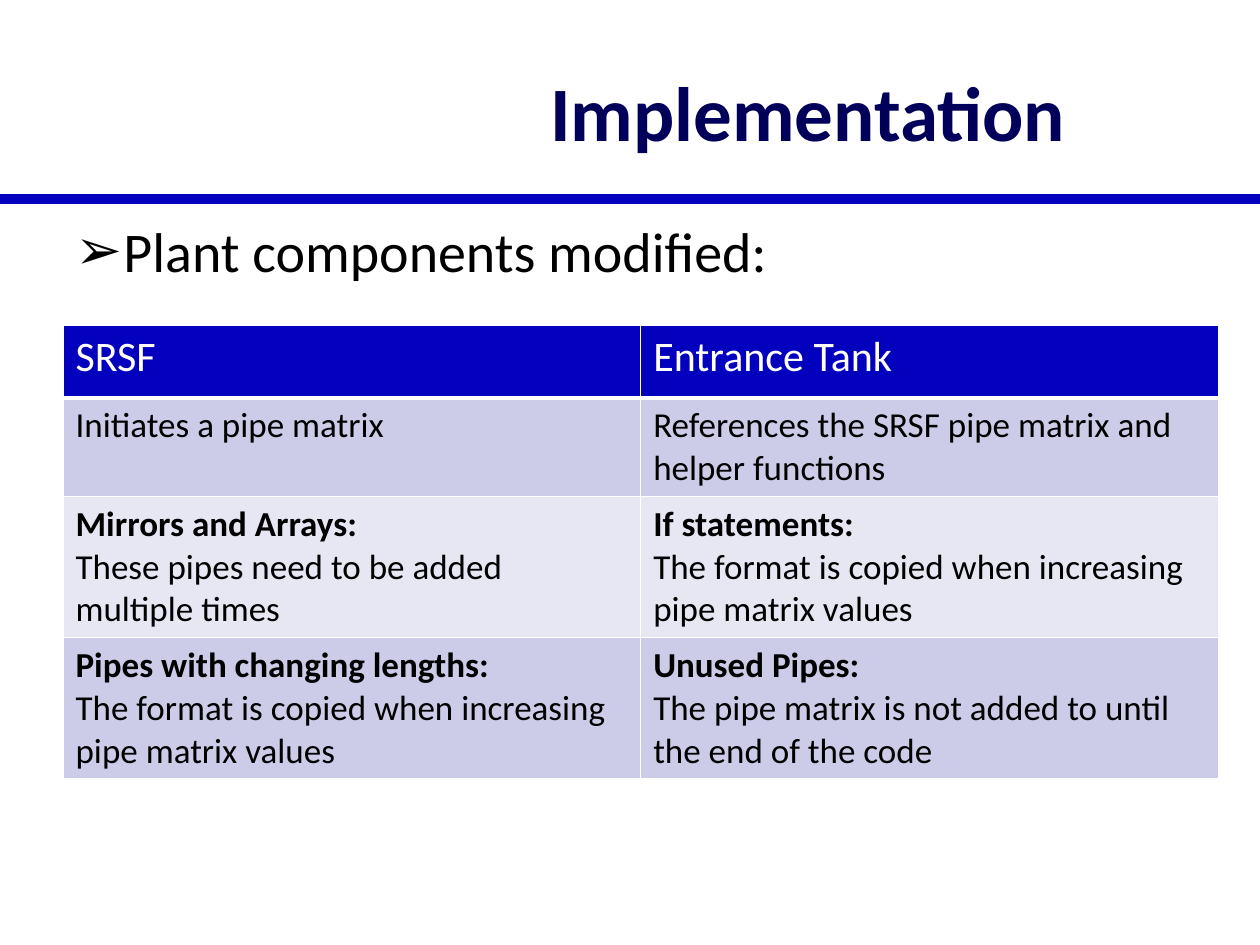
from lxml.etree import SubElement
from pptx import Presentation
from pptx.dml.color import RGBColor
from pptx.enum.shapes import MSO_CONNECTOR as Connector
from pptx.enum.text import MSO_ANCHOR as Anchor, PP_ALIGN as Align
from pptx.oxml.ns import qn
from pptx.util import Inches, Pt

BLUE, NAVY, BLACK, WHITE = "0300BE", "00005A", "000000", "FFFFFF"
BANDS = ["CCCCE8", "E7E7F4"]
HEADINGS = ["SRSF", "Entrance Tank"]
# Each cell is a list of lines; a line before the last is a bold label.
COMPONENTS = [
    [["Initiates a pipe matrix"],
     ["References the SRSF pipe matrix and helper functions"]],
    [["Mirrors and Arrays:", "These pipes need to be added multiple times"],
     ["If statements:", "The format is copied when increasing pipe matrix values"]],
    [["Pipes with changing lengths:", "The format is copied when increasing pipe matrix values"],
     ["Unused Pipes:", "The pipe matrix is not added to until the end of the code"]],
]


def rgb(color):
    return RGBColor.from_string(color)


def set_font(font, color, **values):
    font.color.rgb = rgb(color)
    for name, value in {"name": "Calibri", "bold": False, **values}.items():
        setattr(font, name, value)


def place(shape, left, top, width, height):
    box = {"left": left, "top": top, "width": width, "height": height}
    for name, value in box.items():
        setattr(shape, name, Inches(value))


def add_rule(slide):
    rule = slide.shapes.add_connector(
        Connector.STRAIGHT, 0, Inches(1.58), Inches(10), Inches(1.58))
    rule.line.color.rgb = rgb(BLUE)
    rule.line.width = Pt(6)
    SubElement(rule._element.spPr, qn("a:effectLst"))


def fill_title(title):
    place(title, 3.08, 0.25, 6.67, 1.25)
    title.text_frame.text = "Implementation"
    title.text_frame.vertical_anchor = Anchor.MIDDLE
    paragraph = title.text_frame.paragraphs[0]
    paragraph.alignment = Align.CENTER
    set_font(paragraph.runs[0].font, NAVY, size=Pt(44), bold=True)


def fill_body(body):
    place(body, 0.5, 1.67, 8.92, 5)
    body.text_frame.text = "Plant components modified:"
    paragraph = body.text_frame.paragraphs[0]
    properties = paragraph._p.get_or_add_pPr()
    properties.set("marL", str(Inches(0.38)))
    properties.set("indent", str(Inches(-0.38)))
    SubElement(properties, qn("a:buChar"), char="➢")
    paragraph.space_before = Pt(0)
    set_font(paragraph.runs[0].font, BLACK, size=Pt(32))


def set_borders(cell, top=1, bottom=1):
    properties = cell._tc.get_or_add_tcPr()
    for side, width in {"L": 1, "R": 1, "T": top, "B": bottom}.items():
        border = SubElement(properties, qn(f"a:ln{side}"), w=str(Pt(width)))
        SubElement(SubElement(border, qn("a:solidFill")), qn("a:srgbClr"), val=WHITE)


def fill_cell(cell, lines, fill, color, size):
    cell.fill.solid()
    cell.fill.fore_color.rgb = rgb(fill)
    cell.text_frame.text = "\n".join(lines)
    for number, paragraph in enumerate(cell.text_frame.paragraphs, 1):
        set_font(paragraph.runs[0].font, color, size=Pt(size), bold=number < len(lines))


def add_components_table(slide):
    frame = slide.shapes.add_table(
        len(COMPONENTS) + 1, len(HEADINGS),
        Inches(0.5), Inches(2.58), Inches(9.17), Inches(2.53))
    table = frame.table
    table.first_row = table.horz_banding = False
    for row, height in zip(table.rows, [0.58] + [0.65] * len(COMPONENTS)):
        row.height = Inches(height)
    for column, heading in enumerate(HEADINGS):
        header = table.cell(0, column)
        set_borders(header, bottom=3)
        fill_cell(header, [heading], BLUE, WHITE, 24)
    for index, component in enumerate(COMPONENTS):
        for column, lines in enumerate(component):
            cell = table.cell(index + 1, column)
            set_borders(cell, top=1 if index else 3)
            fill_cell(cell, lines, BANDS[index % 2], BLACK, 20)


def main():
    presentation = Presentation()
    presentation.slide_width = Inches(10)
    presentation.slide_height = Inches(7.5)
    slide = presentation.slides.add_slide(presentation.slide_layouts[1])
    add_rule(slide)
    fill_title(slide.shapes.title)
    fill_body(slide.placeholders[1])
    add_components_table(slide)
    presentation.save("out.pptx")


if __name__ == "__main__":
    main()
